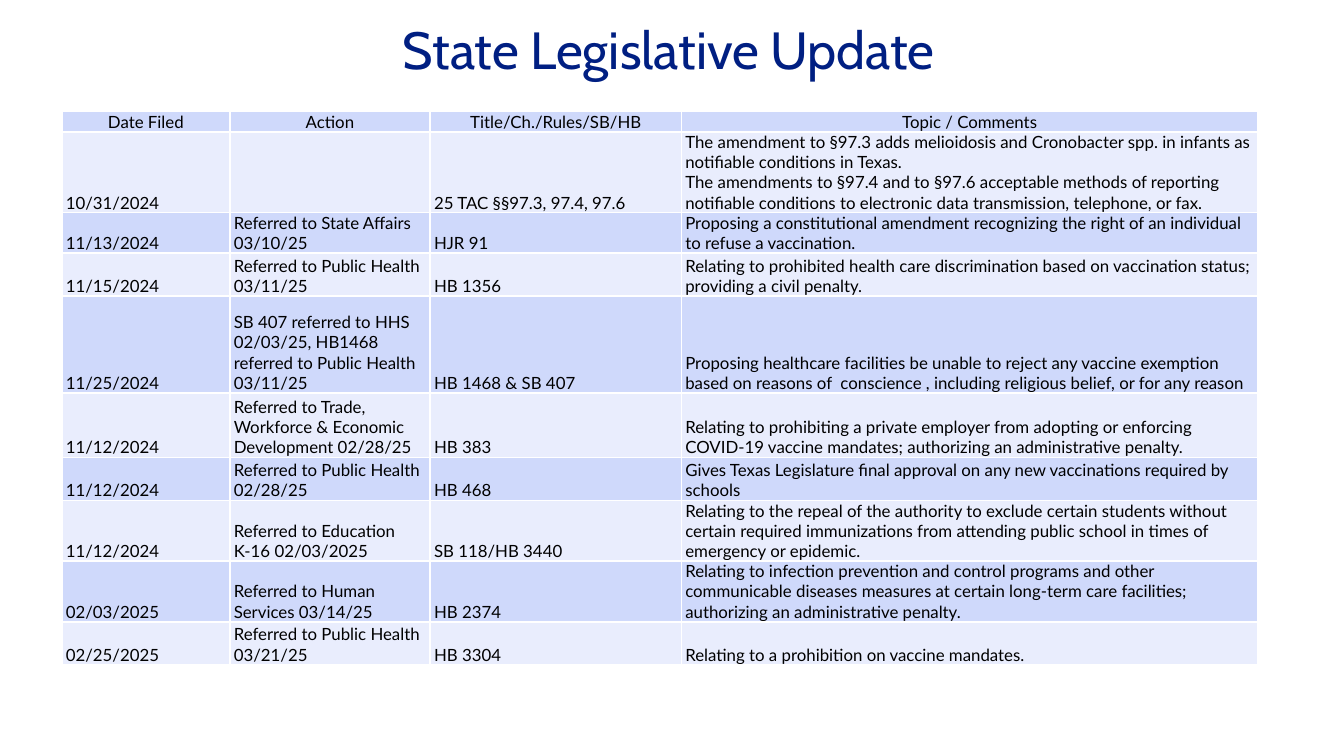
from dataclasses import dataclass
from typing import Any

from lxml.etree import SubElement
from pptx import Presentation
from pptx.dml.color import RGBColor
from pptx.enum.text import MSO_ANCHOR, PP_ALIGN
from pptx.oxml.ns import qn
from pptx.util import Inches, Pt

GRID_COLUMNS, GRID_ROWS = 100, 56.25
BANDS = ("CFD9FB", "E9EDFD")
BORDER = "FFFFFF"
COLUMN_SPANS = (12.5, 14.9, 18.7, 42.9)
TITLE_FONT = {"name": "Cabin", "size": Pt(28)}
TABLE_FONT = {"name": "Lato", "size": Pt(9)}
CELL_FORMAT = {
    "vertical_anchor": MSO_ANCHOR.BOTTOM,
    "margin_left": Inches(0.03),
    "margin_right": Inches(0.03),
    "margin_top": 0,
    "margin_bottom": 0,
}


@dataclass(frozen=True)
class Area:
    left: float
    top: float
    width: float
    height: float

    def lengths(self) -> tuple[int, ...]:
        return tuple(map(grid, (self.left, self.top, self.width, self.height)))


@dataclass(frozen=True)
class Bill:
    span: float
    filed: str
    action: str
    title: str
    topic: str

    def texts(self) -> tuple[str, ...]:
        return self.filed, self.action, self.title, self.topic


BILLS = (
    Bill(1.5, "Date Filed", "Action", "Title/Ch./Rules/SB/HB", "Topic / Comments"),
    Bill(6, "10/31/2024", "", "25 TAC §§97.3, 97.4, 97.6",
         "The amendment to §97.3 adds melioidosis and Cronobacter spp. in infants as "
         "notifiable conditions in Texas.\n"
         "The amendments to §97.4 and to §97.6 acceptable methods of reporting "
         "notifiable conditions to electronic data transmission, telephone, or fax."),
    Bill(3, "11/13/2024", "Referred to State Affairs 03/10/25", "HJR 91",
         "Proposing a constitutional amendment recognizing the right of an individual "
         "to refuse a vaccination."),
    Bill(3.2, "11/15/2024", "Referred to Public Health 03/11/25", "HB 1356",
         "Relating to prohibited health care discrimination based on vaccination status; "
         "providing a civil penalty."),
    Bill(7.2, "11/25/2024",
         "SB 407 referred to HHS 02/03/25, HB1468 referred to Public Health 03/11/25",
         "HB 1468 & SB 407",
         "Proposing healthcare facilities be unable to reject any vaccine exemption "
         "based on reasons of  conscience , including religious belief, or for any reason"),
    Bill(4.8, "11/12/2024",
         "Referred to Trade, Workforce & Economic Development 02/28/25", "HB 383",
         "Relating to prohibiting a private employer from adopting or enforcing "
         "COVID-19 vaccine mandates; authorizing an administrative penalty."),
    Bill(3.2, "11/12/2024", "Referred to Public Health 02/28/25", "HB 468",
         "Gives Texas Legislature final approval on any new vaccinations required by schools"),
    Bill(4.5, "11/12/2024", "Referred to Education K-16 02/03/2025", "SB 118/HB 3440",
         "Relating to the repeal of the authority to exclude certain students without "
         "certain required immunizations from attending public school in times of "
         "emergency or epidemic."),
    Bill(4.5, "02/03/2025", "Referred to Human Services 03/14/25", "HB 2374",
         "Relating to infection prevention and control programs and other "
         "communicable diseases measures at certain long-term care facilities; "
         "authorizing an administrative penalty."),
    Bill(3.2, "02/25/2025", "Referred to Public Health 03/21/25", "HB 3304",
         "Relating to a prohibition on vaccine mandates."),
)


def grid(units: float) -> int:
    return Inches(units / 10)


def color(value: str) -> RGBColor:
    return RGBColor.from_string(value)


def apply_format(target: Any, values: dict[str, Any]) -> None:
    for name, value in values.items():
        setattr(target, name, value)


def write_text(frame: Any, text: str, font: dict[str, Any], ink: str, align: PP_ALIGN) -> None:
    frame.text = text
    for para in frame.paragraphs:
        para.alignment = align
        for span in para.runs:
            apply_format(span.font, font)
            span.font.color.rgb = color(ink)


def draw_borders(cell: Any) -> None:
    properties = cell._tc.get_or_add_tcPr()
    for position, side in enumerate(("lnL", "lnR", "lnT", "lnB")):
        line = SubElement(properties, qn(f"a:{side}"), w=str(Pt(1)))
        fill = SubElement(line, qn("a:solidFill"))
        SubElement(fill, qn("a:srgbClr"), val=BORDER)
        properties.insert(position, line)


def draw_title(page: Any, area: Area, text: str) -> None:
    box = page.shapes.add_textbox(*area.lengths())
    box.text_frame.word_wrap = True
    write_text(box.text_frame, text, TITLE_FONT, "001F82", PP_ALIGN.CENTER)


def draw_bills(page: Any, left: float, top: float, bills: tuple[Bill, ...]) -> None:
    area = Area(left, top, sum(COLUMN_SPANS), sum(bill.span for bill in bills))
    table = page.shapes.add_table(len(bills), len(COLUMN_SPANS), *area.lengths()).table
    for column, span in zip(table.columns, COLUMN_SPANS):
        column.width = grid(span)
    for index, (row, bill) in enumerate(zip(table.rows, bills)):
        row.height = grid(bill.span)
        align = PP_ALIGN.LEFT if index else PP_ALIGN.CENTER
        for cell, text in zip(row.cells, bill.texts()):
            apply_format(cell, CELL_FORMAT)
            cell.fill.solid()
            cell.fill.fore_color.rgb = color(BANDS[index % 2])
            write_text(cell.text_frame, text, TABLE_FONT, "000000", align)
            draw_borders(cell)


def main() -> None:
    deck = Presentation()
    apply_format(deck, {"slide_width": grid(GRID_COLUMNS), "slide_height": grid(GRID_ROWS)})
    page = deck.slides.add_slide(deck.slide_layouts[6])
    draw_title(page, Area(-0.5, 0.8, 100.5, 5.7), "State Legislative Update")
    draw_bills(page, 4.6, 8.3, BILLS)
    deck.save("out.pptx")


if __name__ == "__main__":
    main()
